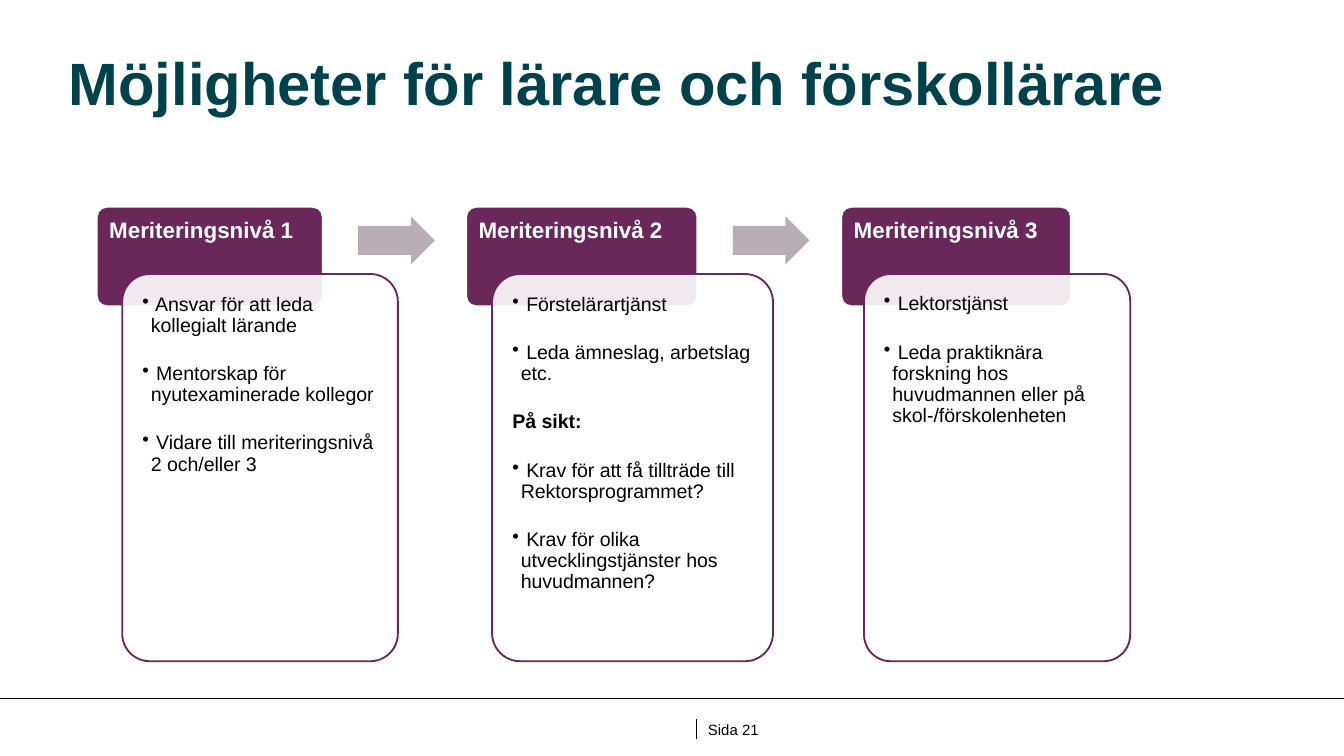
import dataclasses

import lxml.etree
import pptx
import pptx.dml.color
import pptx.enum.shapes
import pptx.enum.text
import pptx.oxml.ns
import pptx.util

Cm = pptx.util.Cm
Pt = pptx.util.Pt
RGB = pptx.dml.color.RGBColor.from_string
Kind = pptx.enum.shapes.MSO_SHAPE
qn = pptx.oxml.ns.qn


@dataclasses.dataclass(frozen=True)
class Theme:
    font: str = "Arial"
    teal: str = "00424C"
    plum: str = "692859"
    gray: str = "B9ADB5"
    white: str = "FFFFFF"
    black: str = "000000"
    title: float = 32
    head: float = 12
    body: float = 10.5
    foot: float = 8


theme = Theme()


def write(shape, text, size=theme.body, color=theme.black, bold=False,
          inset=(0, 0, 0, 0), lead=None, after=0, hang=0, bullet=False):
    """Add one paragraph; the first call fills the empty one."""
    frame = shape.text_frame
    frame.word_wrap = True
    frame.vertical_anchor = pptx.enum.text.MSO_ANCHOR.TOP
    (frame.margin_left, frame.margin_top,
     frame.margin_right, frame.margin_bottom) = [Cm(side) for side in inset]
    para = frame.paragraphs[0] if not frame.text else frame.add_paragraph()
    para.alignment = pptx.enum.text.PP_ALIGN.LEFT
    para.line_spacing = lead
    para.space_after = Pt(after)
    props = para._p.get_or_add_pPr()
    if hang:
        props.set("marL", str(Cm(hang)))
        props.set("indent", str(-Cm(hang)))
    if bullet:
        lxml.etree.SubElement(props, qn("a:buChar")).set("char", "•")
    run = para.add_run()
    run.text = text
    run.font.name = theme.font
    run.font.size = Pt(size)
    run.font.bold = bold
    run.font.color.rgb = RGB(color)


def block(kind, box, fill, line=None, adjust=(0.1,)):
    """Draw a filled preset shape; box is left, top, width, height in cm."""
    shape = slide.shapes.add_shape(kind, *[Cm(side) for side in box])
    shape.shadow.inherit = False
    for place, value in enumerate(adjust):
        shape.adjustments[place] = value
    shape.fill.solid()
    shape.fill.fore_color.rgb = RGB(fill)
    if line:
        shape.line.color.rgb = RGB(line)
        shape.line.width = Pt(1)
    else:
        shape.line.fill.background()
    return shape


deck = pptx.Presentation()
deck.slide_width, deck.slide_height = Cm(25.4), Cm(14.29)
slide = deck.slides.add_slide(deck.slide_layouts[6])

# Footer rules and page number
for x1, y1, x2, y2 in [(0, 13.2, 25.4, 13.2), (13.16, 13.97, 13.16, 13.59)]:
    rule = slide.shapes.add_connector(
        pptx.enum.shapes.MSO_CONNECTOR.STRAIGHT, Cm(x1), Cm(y1), Cm(x2), Cm(y2))
    rule.line.color.rgb = RGB(theme.black)
    rule.line.width = Pt(0.5)
    lxml.etree.SubElement(rule._element.spPr, qn("a:effectLst"))
page = slide.shapes.add_textbox(Cm(13.38), Cm(13.62), Cm(1.27), Cm(0.36))
write(page, "Sida 21", size=theme.foot)

# Title
title = slide.shapes.add_textbox(Cm(1.3), Cm(0.86), Cm(21.97), Cm(2.57))
write(title, "Möjligheter för lärare och förskollärare", size=theme.title,
      color=theme.teal, bold=True, inset=(0, 0.13, 0.25, 0.13), lead=Pt(35))

# Levels: head left and width, card left and width, points
levels = [
    (1.83, 4.27, 2.31, 5.21, [
        "Ansvar för att leda kollegialt lärande",
        "Mentorskap för nyutexaminerade kollegor",
        "Vidare till meriteringsnivå 2 och/eller 3"]),
    (8.81, 4.37, 9.3, 5.31, [
        "Förstelärartjänst",
        "Leda ämneslag, arbetslag etc.",
        "På sikt:",
        "Krav för att få tillträde till Rektorsprogrammet?",
        "Krav för olika utvecklingstjänster hos huvudmannen?"]),
    (15.9, 4.34, 16.33, 5.03, [
        "Lektorstjänst",
        "Leda praktiknära forskning hos huvudmannen eller på "
        "skol-/förskolenheten"]),
]
for number, (left, width, start, span, points) in enumerate(levels, 1):
    # Head
    head = block(Kind.ROUNDED_RECTANGLE, (left, 3.91, width, 1.88),
                 theme.plum, theme.white)
    write(head, f"Meriteringsnivå {number}", size=theme.head, color=theme.white,
          bold=True, inset=(0.18, 0.18, 0.18, 0.13), lead=0.9)

    # Card, slightly see-through over the head
    card = block(Kind.ROUNDED_RECTANGLE, (start, 5.18, span, 7.32),
                 theme.white, theme.plum)
    tint = card._element.spPr.find(qn("a:solidFill"))[0]
    lxml.etree.SubElement(tint, qn("a:alpha")).set("val", "90000")
    for point in points:
        label = point.endswith(":")
        write(card, point if label else " " + point, bold=label,
              bullet=not label, inset=(0.23,) * 4, lead=0.9, after=14.5,
              hang=0.16)

    # Arrow to the next level
    if number < len(levels):
        block(Kind.RIGHT_ARROW, (left + width + 0.67, 4.09, 1.45, 0.91),
              theme.gray, adjust=(0.6, 0.5))

deck.save("out.pptx")
